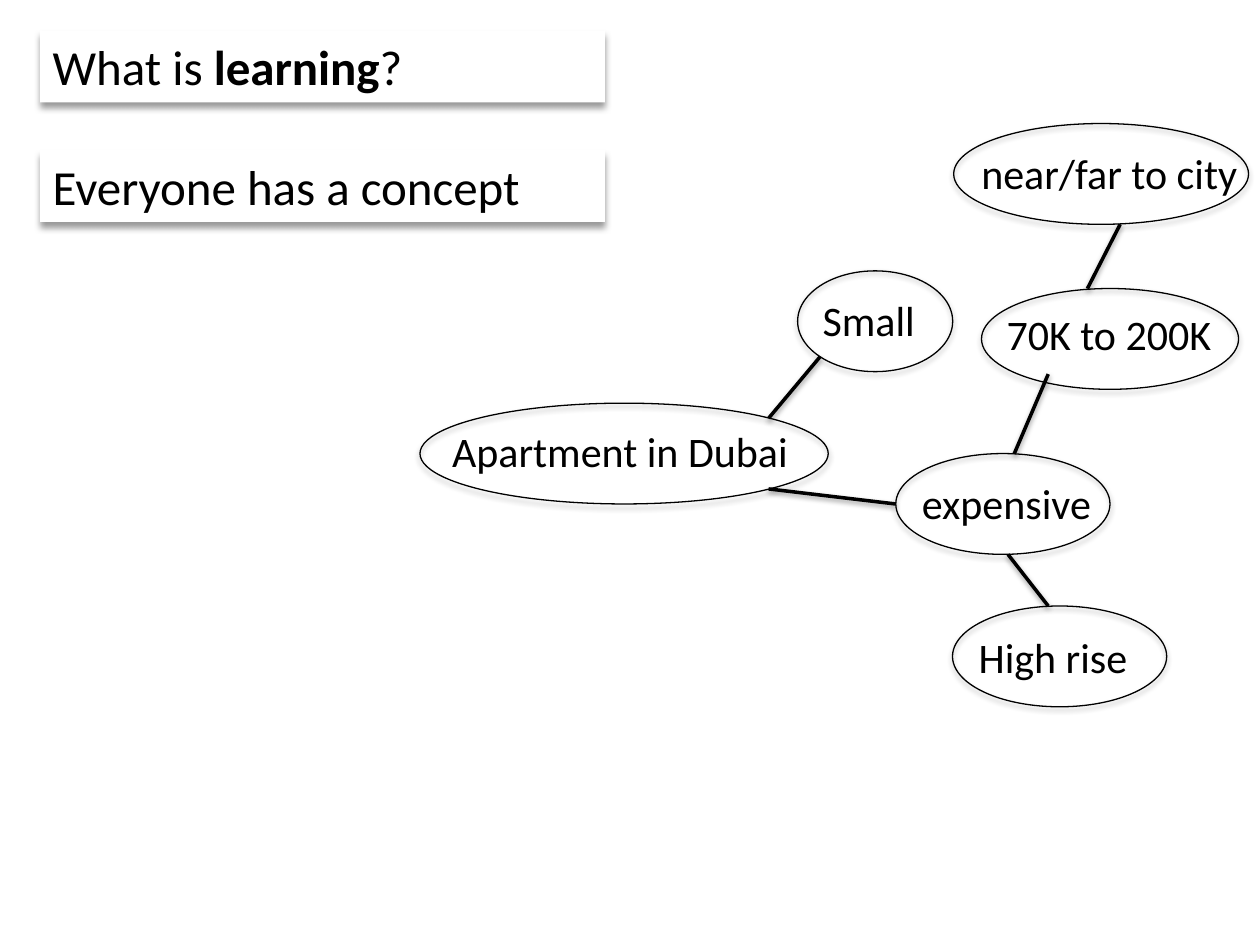
from lxml.etree import SubElement
from pptx import Presentation
from pptx.dml.color import RGBColor
from pptx.enum.shapes import MSO_CONNECTOR, MSO_SHAPE
from pptx.enum.text import MSO_ANCHOR, PP_ALIGN
from pptx.oxml.ns import qn
from pptx.util import Pt

BLACK, WHITE = "000000", "FFFFFF"
HEADINGS = [
    [("What is ", False), ("learning", True), ("?", False)],
    [("Everyone has a concept", False)],
]
HEADING_LEFT, HEADING_TOP, HEADING_STEP = 23, 17.3, 68.4
HEADING_WIDTH, HEADING_HEIGHT = 322.6, 41.2
NODE_HEIGHT, LABEL_HEIGHT = 57.6, 36.3
# label, ellipse (left, top, width), label (left, top, width)
NODES = [
    ("Apartment in Dubai", (240, 230.4, 233.3), (251.3, 239.8, 208.8)),
    ("Small", (455.8, 154.8, 88.6), (463, 164.9, 95.8)),
    ("expensive", (511.9, 259.2, 122.4), (519.8, 269.3, 139.7)),
    ("70K to 200K", (560.9, 164.9, 146.9), (568.1, 172.8, 139.7)),
    ("High rise", (544.3, 346.3, 122.4), (552.2, 357.1, 139.7)),
    ("near/far to city", (545, 70.6, 168.5), (553.7, 80.6, 184.3)),
]
LINKS = [
    (439.2, 239, 468.7, 203.8),
    (439.2, 279.4, 511.9, 288),
    (579.6, 259.2, 599, 213.8),
    (576, 316.8, 599, 346.3),
    (640.1, 128.2, 621.4, 164.9),
]


def color(value):
    return RGBColor.from_string(value)


def add_shadow(shape, opacity, blur, distance):
    properties = shape._element.spPr
    for old in properties.findall(qn("a:effectLst")):
        properties.remove(old)
    effects = SubElement(properties, qn("a:effectLst"))
    shadow = SubElement(effects, qn("a:outerShdw"), blurRad=str(Pt(blur)),
                        dist=str(Pt(distance)), dir="5400000", rotWithShape="0")
    shade = SubElement(shadow, qn("a:srgbClr"), val=BLACK)
    SubElement(shade, qn("a:alpha"), val=str(opacity * 1000))


def write(shape, runs, size):
    frame = shape.text_frame
    frame.word_wrap = True
    frame.vertical_anchor = MSO_ANCHOR.TOP
    paragraph = frame.paragraphs[0]
    paragraph.alignment = PP_ALIGN.LEFT
    paragraph.font.name = "Calibri"
    paragraph.font.size = Pt(size)
    paragraph.font.color.rgb = color(BLACK)
    for text, bold in runs:
        run = paragraph.add_run()
        run.text = text
        run.font.bold = bold
        run.font.color.rgb = color(BLACK)


def add_heading(slide, index, runs):
    top = HEADING_TOP + index * HEADING_STEP
    shape = slide.shapes.add_shape(MSO_SHAPE.RECTANGLE, Pt(HEADING_LEFT), Pt(top),
                                   Pt(HEADING_WIDTH), Pt(HEADING_HEIGHT))
    shape.fill.solid()
    shape.fill.fore_color.rgb = color(WHITE)
    shape.line.fill.background()
    add_shadow(shape, 40, 4, 3)
    write(shape, runs, 28)


def add_node(slide, label, ellipse_place, label_place):
    box = slide.shapes.add_textbox(*map(Pt, label_place), Pt(LABEL_HEIGHT))
    write(box, [(label, False)], 24)
    ellipse = slide.shapes.add_shape(MSO_SHAPE.OVAL, *map(Pt, ellipse_place), Pt(NODE_HEIGHT))
    ellipse.fill.background()
    ellipse.line.color.rgb = color(BLACK)
    ellipse.line.width = Pt(0.75)
    add_shadow(ellipse, 35, 3.1, 1.8)


def add_link(slide, ends):
    link = slide.shapes.add_connector(MSO_CONNECTOR.STRAIGHT, *map(Pt, ends))
    link.line.color.rgb = color(BLACK)
    link.line.width = Pt(2)
    add_shadow(link, 38, 3.1, 1.6)


def main():
    presentation = Presentation()
    presentation.slide_width, presentation.slide_height = Pt(720), Pt(540)
    slide = presentation.slides.add_slide(presentation.slide_layouts[6])
    for node in NODES:
        add_node(slide, *node)
    for ends in LINKS:
        add_link(slide, ends)
    for index, runs in enumerate(HEADINGS):
        add_heading(slide, index, runs)
    presentation.save("out.pptx")


if __name__ == "__main__":
    main()
